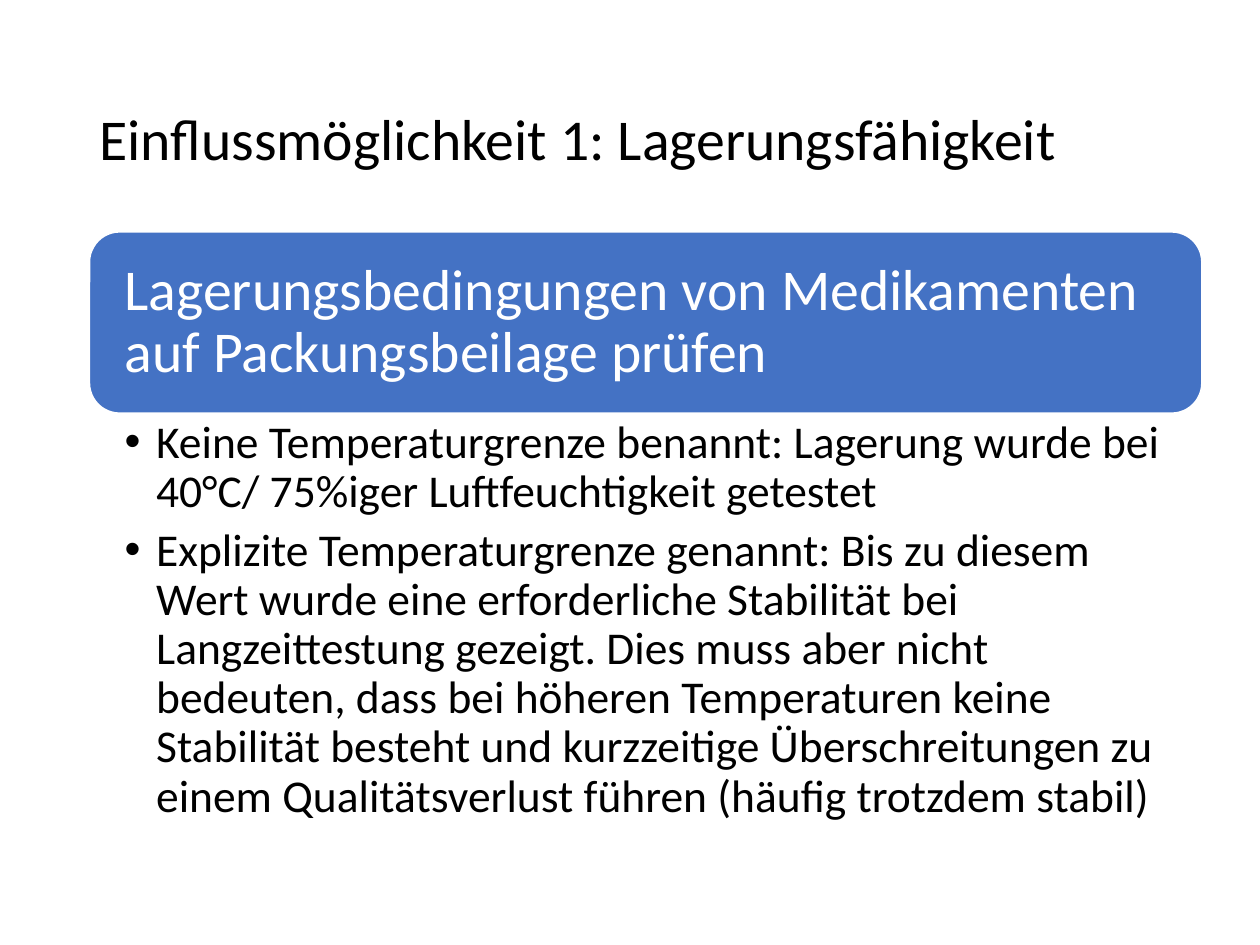
from lxml import etree
from pptx import Presentation
from pptx.dml.color import RGBColor
from pptx.enum import shapes, text
from pptx.oxml import ns
from pptx.util import Inches, Pt

# Content
TITLE = "Einflussmöglichkeit 1: Lagerungsfähigkeit"
BANNER = "Lagerungsbedingungen von Medikamenten auf Packungsbeilage prüfen"
DETAILS = [
    "Keine Temperaturgrenze benannt: Lagerung wurde bei 40°C/ 75%iger "
    "Luftfeuchtigkeit getestet",
    "Explizite Temperaturgrenze genannt: Bis zu diesem Wert wurde eine "
    "erforderliche Stabilität bei Langzeittestung gezeigt. Dies muss aber nicht "
    "bedeuten, dass bei höheren Temperaturen keine Stabilität besteht und "
    "kurzzeitige Überschreitungen zu einem Qualitätsverlust führen "
    "(häufig trotzdem stabil)",
]
COLORS = {"text": "000000", "banner": "4472C4", "light": "FFFFFF"}
FONT = "Calibri"

# Layout in inches: the details sit directly below the banner
LEFT, WIDTH = 0.71, 8.83
BANNER_TOP, BANNER_HEIGHT = 1.84, 1.44
DETAILS_TOP = BANNER_TOP + BANNER_HEIGHT


def color(name):
    return RGBColor.from_string(COLORS[name])


def add_bullet(paragraph, indent):
    props = paragraph._p.get_or_add_pPr()
    props.set("marL", str(Inches(indent)))
    props.set("indent", str(Inches(-indent)))
    etree.SubElement(props, ns.qn("a:buFont")).set("typeface", "Arial")
    etree.SubElement(props, ns.qn("a:buChar")).set("char", "•")


def write(shape, paragraphs, size=33, ink="text", insets=(0.1, 0.05, 0.1, 0.05),
          anchor=text.MSO_ANCHOR.MIDDLE, after=0, bullet_indent=None):
    frame = shape.text_frame
    frame.word_wrap = True
    frame.vertical_anchor = anchor
    (frame.margin_left, frame.margin_top,
     frame.margin_right, frame.margin_bottom) = map(Inches, insets)
    for i, words in enumerate(paragraphs):
        paragraph = frame.add_paragraph() if i else frame.paragraphs[0]
        paragraph.alignment = text.PP_ALIGN.LEFT
        paragraph.line_spacing = 0.9
        paragraph.space_after = Pt(after)
        if bullet_indent:
            add_bullet(paragraph, bullet_indent)
        run = paragraph.add_run()
        run.text = words
        run.font.name, run.font.size = FONT, Pt(size)
        run.font.color.rgb = color(ink)


prs = Presentation()
prs.slide_width, prs.slide_height = Inches(10), Inches(7.5)
slide = prs.slides.add_slide(prs.slide_layouts[6])

# Title
title = slide.shapes.add_textbox(*map(Inches, (0.69, 0.4, 8.62, 1.45)))
write(title, [TITLE])

# Banner
banner = slide.shapes.add_shape(
    shapes.MSO_SHAPE.ROUNDED_RECTANGLE,
    *map(Inches, (LEFT, BANNER_TOP, WIDTH, BANNER_HEIGHT)))
banner.shadow.inherit = False
banner.fill.solid()
banner.fill.fore_color.rgb = color("banner")
banner.line.color.rgb = color("light")
banner.line.width = Pt(1)
write(banner, [BANNER], ink="light", insets=(0.21,) * 4)

# Details
details = slide.shapes.add_textbox(
    *map(Inches, (LEFT, DETAILS_TOP, WIDTH, 3.36)))
write(details, DETAILS, size=26, insets=(0.28, 0.05, 0.26, 0.05),
      anchor=text.MSO_ANCHOR.TOP, after=5.5, bullet_indent=0.25)

prs.save("out.pptx")
